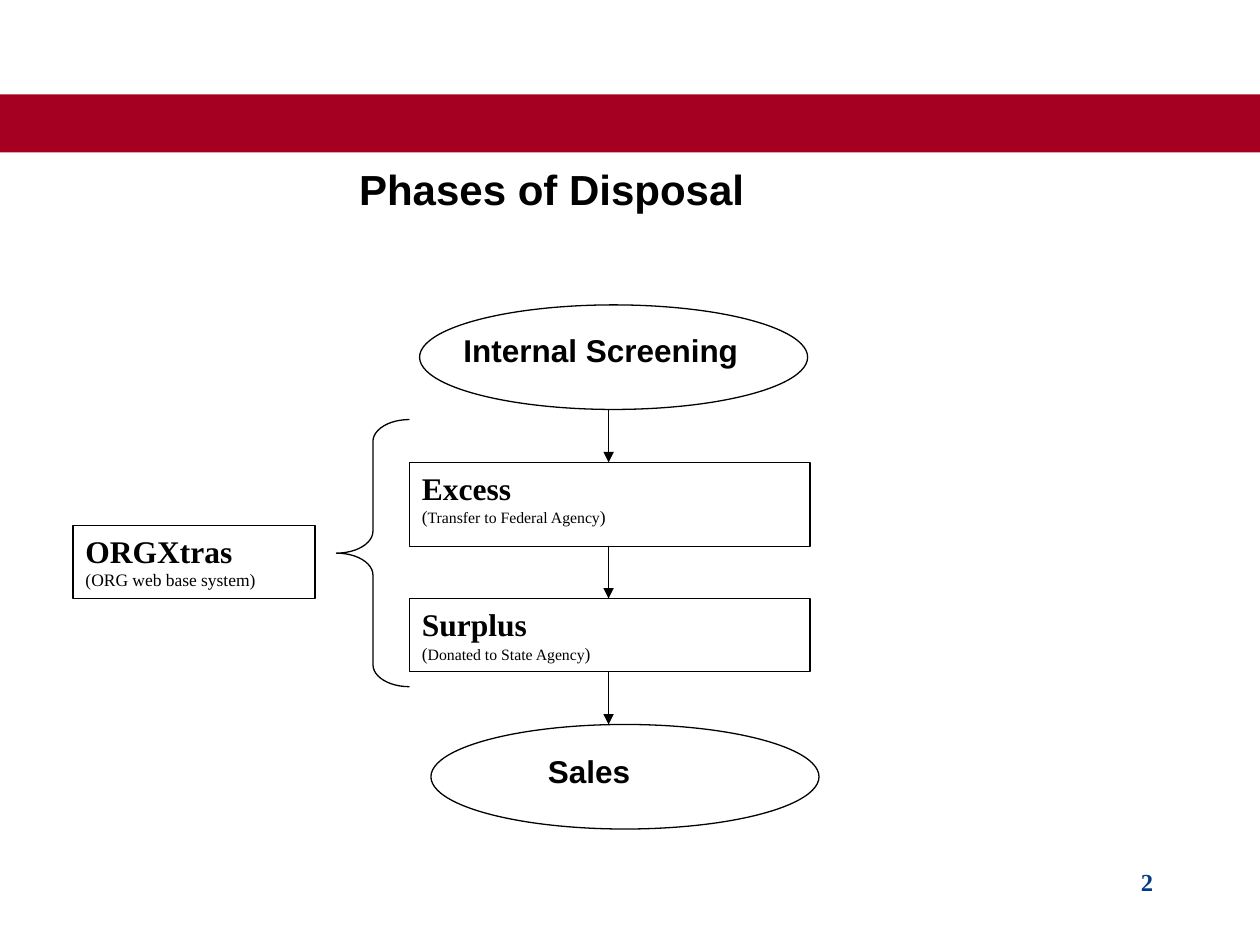
from lxml import etree
from pptx import Presentation
from pptx.dml.color import RGBColor
from pptx.enum import shapes, text
from pptx.oxml.ns import qn
from pptx.util import Inches, Pt

SERIF, SANS = "Times New Roman", "Arial"
BLACK, WHITE, RED, BLUE = "000000", "FFFFFF", "A50021", "013C88"
KIND, ALIGN = shapes.MSO_SHAPE, text.PP_ALIGN

TITLE = ("Phases of Disposal", (2.75, 1.25, 4.08, 0.5))
BAND = (0, 0.75, 10, 0.46)
BOXES = [
    ("ORGXtras", [("(ORG web base system)", 10)], (0.58, 4.17, 1.92, 0.58)),
    ("Excess", [("(", 10), ("Transfer to Federal Agency", 9), (")", 10)],
     (3.25, 3.67, 3.18, 0.67)),
    ("Surplus", [("(", 10), ("Donated to State Agency", 9), (")", 10)],
     (3.25, 4.75, 3.18, 0.58)),
]
OVALS = [(3.33, 2.42, 3.08, 0.83), (3.42, 5.75, 3.08, 0.83)]
LABELS = [
    ("Internal Screening", (3.58, 2.58, 2.8, 0.4), 18, SANS, BLACK, ALIGN.LEFT),
    ("Sales", (4.25, 5.92, 1.22, 0.4), 18, SANS, BLACK, ALIGN.LEFT),
    ("2", (7.17, 6.83, 2.08, 0.5), 14, SERIF, BLUE, ALIGN.RIGHT),
]
BRACE = (2.67, 3.33, 0.58, 2.12)
ARROW_X, ARROW_LEN = 4.83, 0.42
ARROW_TOPS = [3.25, 4.33, 5.33]


def rgb(code):
    return RGBColor.from_string(code)


def inch(spot):
    return [Inches(v) for v in spot]


def style(para, size, face, color=BLACK, bold=True, align=ALIGN.LEFT):
    para.alignment = align
    font = para.font
    font.size, font.name, font.bold = Pt(size), face, bold
    font.color.rgb = rgb(color)


def draw(slide, kind, spot, fill=None, line=BLACK):
    shape = slide.shapes.add_shape(kind, *inch(spot))
    shape.shadow.inherit = False
    if fill:
        shape.fill.solid()
        shape.fill.fore_color.rgb = rgb(fill)
    else:
        shape.fill.background()
    if line:
        shape.line.color.rgb = rgb(line)
        shape.line.width = Pt(0.75)
    else:
        shape.line.fill.background()
    return shape


def head(slide, words, spot):
    title = slide.shapes.title
    title.left, title.top, title.width, title.height = inch(spot)
    frame = title.text_frame
    frame.text = words
    frame.vertical_anchor = text.MSO_ANCHOR.TOP
    style(frame.paragraphs[0], 24, SANS)


def box(slide, name, note, spot):
    frame = draw(slide, KIND.RECTANGLE, spot, WHITE).text_frame
    frame.vertical_anchor = text.MSO_ANCHOR.TOP
    frame.text = name
    style(frame.paragraphs[0], 18, SERIF)
    para = frame.add_paragraph()
    style(para, 10, SERIF, bold=False)
    for words, size in note:
        run = para.add_run()
        run.text = words
        run.font.size = Pt(size)


def label(slide, words, spot, size, face, color, align):
    frame = slide.shapes.add_textbox(*inch(spot)).text_frame
    frame.word_wrap = True
    frame.text = words
    style(frame.paragraphs[0], size, face, color, align=align)


def arrow(slide, top):
    ends = inch((ARROW_X, top, ARROW_X, top + ARROW_LEN))
    link = slide.shapes.add_connector(shapes.MSO_CONNECTOR.STRAIGHT, *ends)
    link.line.color.rgb = rgb(BLACK)
    link.line.width = Pt(0.75)
    etree.SubElement(link.line._get_or_add_ln(), qn("a:tailEnd"), type="triangle")
    etree.SubElement(link._element.spPr, qn("a:effectLst"))


def main():
    deck = Presentation()
    deck.slide_width, deck.slide_height = Inches(10), Inches(7.5)
    slide = deck.slides.add_slide(deck.slide_layouts.get_by_name("Title Only"))
    draw(slide, KIND.RECTANGLE, BAND, RED, None)
    head(slide, *TITLE)
    for item in BOXES:
        box(slide, *item)
    for spot in OVALS:
        draw(slide, KIND.OVAL, spot)
    for item in LABELS:
        label(slide, *item)
    for top in ARROW_TOPS:
        arrow(slide, top)
    brace = draw(slide, KIND.LEFT_BRACE, BRACE)
    brace.adjustments[0] = 0.3
    deck.save("out.pptx")


if __name__ == "__main__":
    main()
